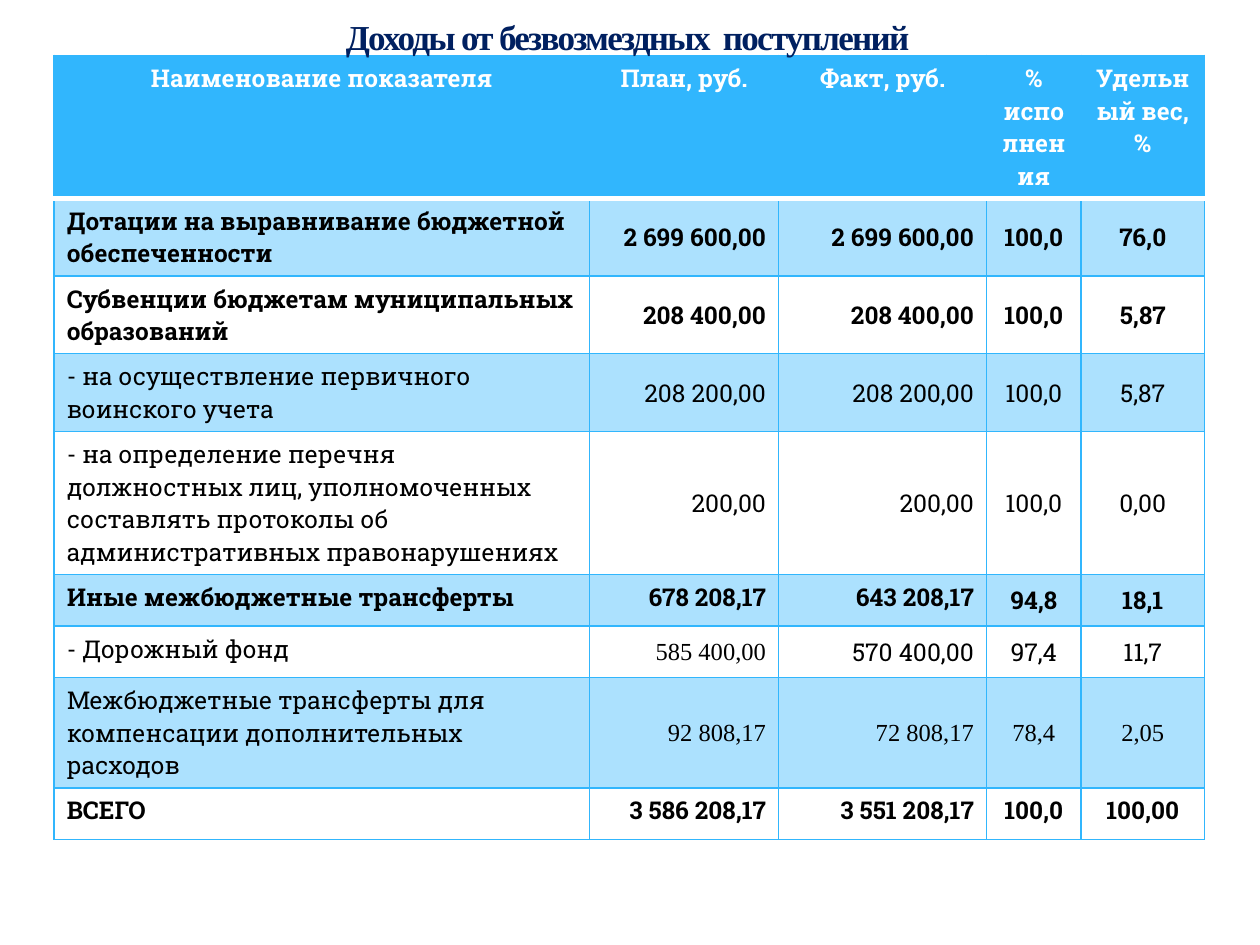
from dataclasses import dataclass

import pptx
import pptx.dml.color
import pptx.enum.text
import pptx.oxml
import pptx.oxml.ns
import pptx.util

Align = pptx.enum.text.PP_ALIGN
Anchor = pptx.enum.text.MSO_ANCHOR
Inches, Pt = pptx.util.Inches, pptx.util.Pt


@dataclass(frozen=True)
class Theme:
    accent: str = "31B6FD"
    header_text: str = "FFFFFF"
    text: str = "000000"
    title: str = "002060"
    title_outline: str = "AFCCDE"
    font: str = "Roboto Slab"
    serif: str = "Times New Roman"
    title_size: int = 20
    table_size: int = 14
    band_alpha: int = 40


@dataclass(frozen=True)
class Row:
    values: tuple[str, ...]
    bold: bool = False
    serif: tuple[int, ...] = ()  # columns set in the serif font
    top: tuple[int, ...] = (0,)  # columns anchored at the top


THEME = Theme()
COLUMNS = (4.25, 1.5, 1.65, 0.75, 0.98)
ALIGNS = (Align.LEFT, Align.RIGHT, Align.RIGHT, Align.CENTER, Align.CENTER)
ROW_HEIGHT = 0.41
HEADER = Row(("Наименование показателя", "План, руб.", "Факт, руб.",
              "% исполнения", "Удельный вес, %"), bold=True, top=tuple(range(5)))
ROWS = (
    Row(("Дотации на выравнивание бюджетной обеспеченности",
         "2 699 600,00", "2 699 600,00", "100,0", "76,0"), bold=True),
    Row(("Субвенции бюджетам муниципальных образований",
         "208 400,00", "208 400,00", "100,0", "5,87"), bold=True),
    Row(("- на осуществление первичного воинского учета",
         "208 200,00", "208 200,00", "100,0", "5,87")),
    Row(("- на определение перечня должностных лиц, уполномоченных составлять "
         "протоколы об административных правонарушениях",
         "200,00", "200,00", "100,0", "0,00")),
    Row(("Иные межбюджетные трансферты",
         "678 208,17", "643 208,17", "94,8", "18,1"), bold=True, top=(0, 1, 2)),
    Row(("- Дорожный фонд", "585 400,00", "570 400,00", "97,4", "11,7"), serif=(1,)),
    Row(("Межбюджетные трансферты для компенсации дополнительных расходов",
         "92 808,17", "72 808,17", "78,4", "2,05"), serif=(1, 2, 3, 4)),
    Row(("ВСЕГО", "3 586 208,17", "3 551 208,17", "100,0", "100,00"),
        bold=True, top=tuple(range(5))),
)


def solid_xml(color: str, alpha: int = 100) -> str:
    return (f'<a:solidFill><a:srgbClr val="{color}"><a:alpha val="{alpha * 1000}"/>'
            '</a:srgbClr></a:solidFill>')


def line_xml(tag: str, color: str, width: float, alpha: int = 100):
    return pptx.oxml.parse_xml(
        f'<a:{tag} {pptx.oxml.ns.nsdecls("a")} w="{Pt(width)}">'
        f'{solid_xml(color, alpha)}<a:prstDash val="solid"/></a:{tag}>')


def set_font(font, name: str, size: int, color: str, bold: bool) -> None:
    font.name, font.size, font.bold = name, Pt(size), bold
    font.color.rgb = pptx.dml.color.RGBColor.from_string(color)


def set_borders(cell, top: tuple[str, float], bottom: tuple[str, float]) -> None:
    side = (THEME.accent, 1)
    lines = {"lnL": side, "lnR": side, "lnT": top, "lnB": bottom}
    for i, (tag, (color, width)) in enumerate(lines.items()):
        cell._tc.get_or_add_tcPr().insert(i, line_xml(tag, color, width))


def fill_cell(cell, alpha: int) -> None:
    if not alpha:
        cell.fill.background()
        return
    cell.fill.solid()
    cell.fill.fore_color.rgb = pptx.dml.color.RGBColor.from_string(THEME.accent)
    if alpha < 100:
        clr = cell._tc.tcPr.find(".//" + pptx.oxml.ns.qn("a:srgbClr"))
        clr.append(pptx.oxml.parse_xml(
            f'<a:alpha {pptx.oxml.ns.nsdecls("a")} val="{alpha * 1000}"/>'))


def draw_row(table, index: int, row: Row) -> None:
    header = index == 0
    thin, thick = (THEME.accent, 1), (THEME.header_text, 3)
    for col, value in enumerate(row.values):
        cell = table.cell(index, col)
        cell.text = value
        cell.vertical_anchor = Anchor.TOP if col in row.top else Anchor.MIDDLE
        p = cell.text_frame.paragraphs[0]
        p.alignment = Align.CENTER if header else ALIGNS[col]
        set_font(p.font, THEME.serif if col in row.serif else THEME.font,
                 THEME.table_size, THEME.header_text if header else THEME.text, row.bold)
        fill_cell(cell, 100 if header else THEME.band_alpha * (index % 2))
        set_borders(cell, thick if index == 1 else thin, thick if header else thin)


def draw_table(slide, left: int, top: int) -> None:
    rows = (HEADER, *ROWS)
    table = slide.shapes.add_table(
        len(rows), len(COLUMNS), left, top,
        Inches(sum(COLUMNS)), Inches(ROW_HEIGHT * len(rows))).table
    table.horz_banding = False
    for column, width in zip(table.columns, COLUMNS):
        column.width = Inches(width)
    for index, row in enumerate(rows):
        table.rows[index].height = Inches(ROW_HEIGHT)
        draw_row(table, index, row)


def draw_title(slide, text: str) -> None:
    sp = slide.shapes.title
    sp.left, sp.top, sp.width, sp.height = Inches(1.14), 0, Inches(7.68), Inches(0.58)
    tf = sp.text_frame
    tf.text, tf.vertical_anchor, tf.word_wrap = text, Anchor.MIDDLE, True
    p = tf.paragraphs[0]
    p.alignment = Align.CENTER
    set_font(p.font, THEME.serif, THEME.title_size, THEME.title, True)
    # Tight letter spacing and a faint outline
    rPr = p.runs[0]._r.get_or_add_rPr()
    rPr.set("spc", "-100")
    rPr.insert(0, line_xml("ln", THEME.title_outline, 0.25, 25))
    # The title lies in front of the table
    slide.shapes._spTree.append(sp._element)


def main() -> None:
    prs = pptx.Presentation()
    prs.slide_width, prs.slide_height = Inches(10), Inches(7.5)
    slide = prs.slides.add_slide(prs.slide_layouts[5])
    draw_table(slide, Inches(0.43), Inches(0.44))
    draw_title(slide, "Доходы от безвозмездных  поступлений")
    prs.save("out.pptx")


if __name__ == "__main__":
    main()
